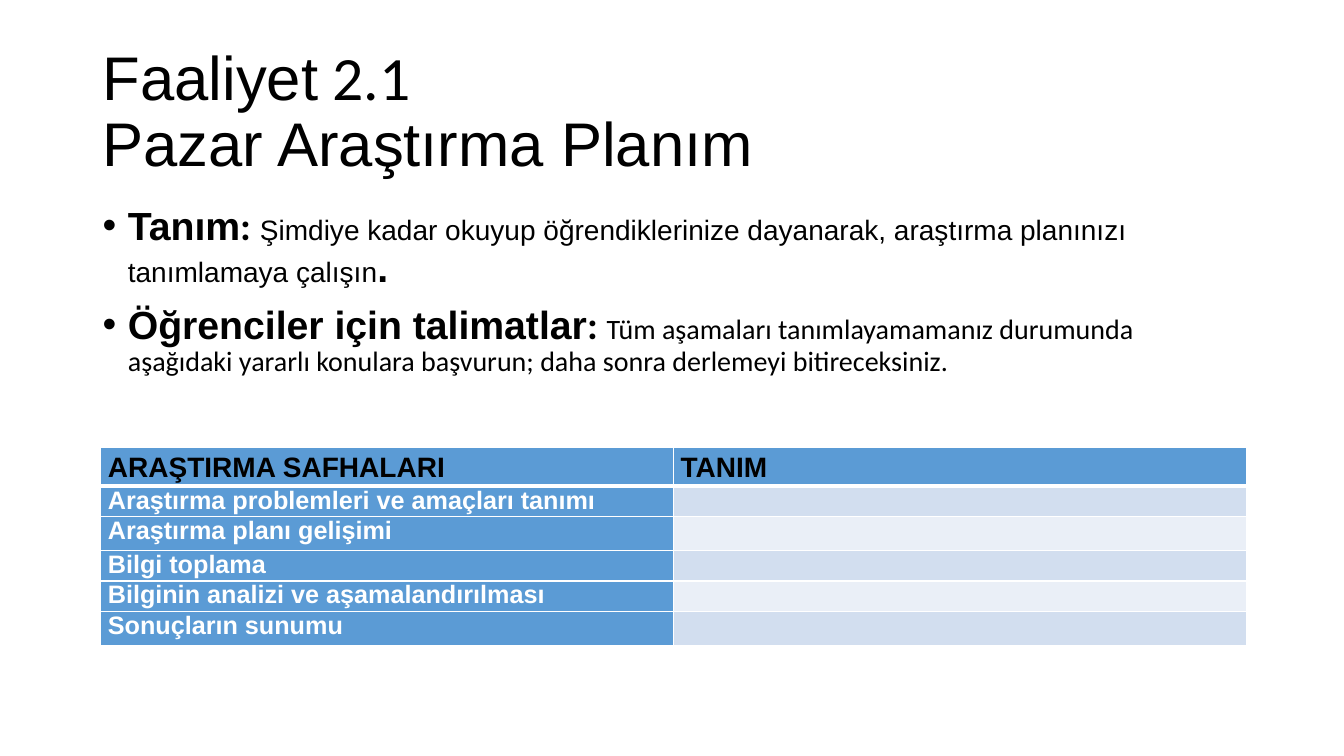
from dataclasses import dataclass

from lxml import etree
from pptx import Presentation
from pptx import util as u
from pptx.dml.color import RGBColor
from pptx.enum import text
from pptx.oxml.ns import qn


@dataclass(frozen=True)
class Theme:
    ink: str = "000000"
    white: str = "FFFFFF"
    accent: str = "5B9BD5"
    bands: tuple[str, str] = ("D2DEEF", "EAEFF7")
    title: int = 44
    lead: int = 28
    body: int = 20
    cell: int = 18
    main: str = "Arial"
    alt: str = "Calibri"


@dataclass(frozen=True)
class Run:
    text: str
    size: int
    font: str
    bold: bool = False


@dataclass(frozen=True)
class Phase:
    name: str
    height: float


T = Theme()

TITLE = [
    [Run("Faaliyet", T.title, T.main), Run(" 2.1", T.title, T.alt)],
    [Run("Pazar Araştırma Planım", T.title, T.main)],
]
BULLETS = [
    [
        Run("Tanım", T.lead, T.main, True),
        Run(": ", T.lead, T.alt, True),
        Run("Şimdiye kadar okuyup öğrendiklerinize dayanarak, araştırma planınızı "
            "tanımlamaya çalışın", T.body, T.main),
        Run(".", T.lead, T.main, True),
    ],
    [
        Run("Öğrenciler için talimatlar", T.lead, T.main, True),
        Run(": ", T.lead, T.alt, True),
        Run("Tüm aşamaları tanımlayamamanız durumunda aşağıdaki yararlı konulara "
            "başvurun; daha sonra derlemeyi bitireceksiniz.", T.body, T.alt),
    ],
]
HEADERS = ["ARAŞTIRMA SAFHALARI", "TANIM"]
HEADER_HEIGHT = 0.36
PHASES = [
    Phase("Araştırma problemleri ve amaçları tanımı", 0.28),
    Phase("Araştırma planı gelişimi", 0.34),
    Phase("Bilgi toplama", 0.28),
    Phase("Bilginin analizi ve aşamalandırılması", 0.28),
    Phase("Sonuçların sunumu", 0.34),
]


def add_text(p, content: str, *, size: int, font: str = T.main,
             color: str = T.ink, bold: bool = False) -> None:
    r = p.add_run()
    r.text = content
    r.font.size = u.Pt(size)
    r.font.name = font
    r.font.bold = bold
    r.font.color.rgb = RGBColor.from_string(color)


def add_runs(p, runs: list[Run]) -> None:
    for run in runs:
        add_text(p, run.text, size=run.size, font=run.font, bold=run.bold)


def add_box(s, left: float, top: float, width: float, height: float, anchor):
    tf = s.shapes.add_textbox(*map(u.Inches, (left, top, width, height))).text_frame
    tf.word_wrap = True
    tf.vertical_anchor = anchor
    return tf


def set_bullet(p) -> None:
    pPr = p._p.get_or_add_pPr()
    pPr.set("marL", str(u.Inches(0.25)))
    pPr.set("indent", str(-u.Inches(0.25)))
    etree.SubElement(pPr, qn("a:buFont")).set("typeface", T.main)
    etree.SubElement(pPr, qn("a:buChar")).set("char", "•")


def style_cell(cell, fill: str, top: int = 1, bottom: int = 1) -> None:
    cell.margin_left = cell.margin_right = u.Inches(0.07)
    cell.margin_top = cell.margin_bottom = 0
    tcPr = cell._tc.get_or_add_tcPr()
    for side, width in zip("LRTB", (1, 1, top, bottom)):
        ln = etree.SubElement(tcPr, qn(f"a:ln{side}"), w=str(u.Pt(width)))
        solid = etree.SubElement(ln, qn("a:solidFill"))
        etree.SubElement(solid, qn("a:srgbClr"), val=T.white)
    cell.fill.solid()
    cell.fill.fore_color.rgb = RGBColor.from_string(fill)


def add_plan(s) -> None:
    heights = [HEADER_HEIGHT] + [phase.height for phase in PHASES]
    frame = s.shapes.add_table(len(heights), len(HEADERS), u.Inches(1), u.Inches(4.44),
                               u.Inches(11.36), u.Inches(sum(heights)))
    table = frame.table
    for row, height in zip(table.rows, heights):
        row.height = u.Inches(height)

    # Header row
    for col, header in enumerate(HEADERS):
        cell = table.cell(0, col)
        style_cell(cell, T.accent, bottom=3)
        p = cell.text_frame.paragraphs[0]
        p.line_spacing = 1.15
        p.space_before = u.Pt(24)
        add_text(p, header, size=T.body, bold=True)

    # Research phases, each with an empty answer cell
    for i, phase in enumerate(PHASES):
        name, answer = table.cell(i + 1, 0), table.cell(i + 1, 1)
        top = 3 if i == 0 else 1
        style_cell(name, T.accent, top=top)
        add_text(name.text_frame.paragraphs[0], phase.name,
                 size=T.cell, color=T.white, bold=True)
        style_cell(answer, T.bands[i % 2], top=top)
        etree.SubElement(answer.text_frame.paragraphs[0]._p,
                         qn("a:endParaRPr"), sz=str(T.cell * 100))


def main() -> None:
    prs = Presentation()
    prs.slide_width, prs.slide_height = u.Inches(13.33), u.Inches(7.5)
    s = prs.slides.add_slide(prs.slide_layouts[6])

    # Title
    tf = add_box(s, 0.92, 0.4, 11.5, 1.45, text.MSO_ANCHOR.MIDDLE)
    p = tf.paragraphs[0]
    p.line_spacing = 0.9
    for i, line in enumerate(TITLE):
        if i:
            p.add_line_break()
        add_runs(p, line)

    # Bulleted instructions
    tf = add_box(s, 0.92, 2, 11.5, 4.76, text.MSO_ANCHOR.TOP)
    for i, runs in enumerate(BULLETS):
        p = tf.add_paragraph() if i else tf.paragraphs[0]
        p.line_spacing = 0.9
        p.space_before = u.Pt(10)
        set_bullet(p)
        add_runs(p, runs)

    # Research plan table
    add_plan(s)
    prs.save("out.pptx")


if __name__ == "__main__":
    main()
